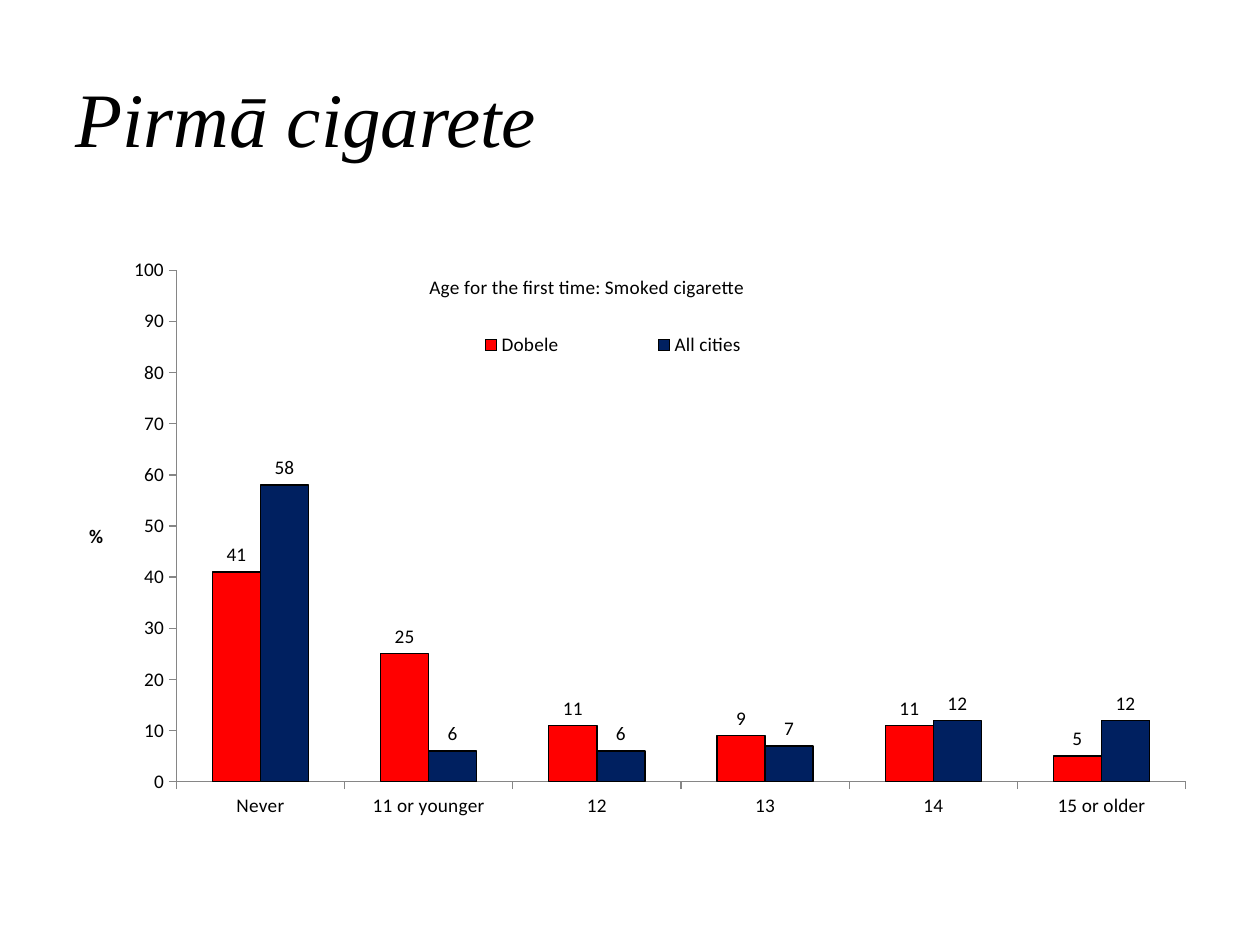
from dataclasses import dataclass

from lxml import etree
from pptx import Presentation
from pptx.chart.data import CategoryChartData
from pptx.dml.color import RGBColor
from pptx.enum.chart import (XL_CHART_TYPE, XL_LABEL_POSITION,
                             XL_LEGEND_POSITION, XL_TICK_MARK)
from pptx.enum.text import MSO_ANCHOR, PP_ALIGN
from pptx.oxml.ns import qn
from pptx.util import Inches, Pt

COLUMNS = XL_CHART_TYPE.COLUMN_CLUSTERED
OUTSIDE_END = XL_LABEL_POSITION.OUTSIDE_END
LEGEND_RIGHT = XL_LEGEND_POSITION.RIGHT
TICK_OUT, TICK_NONE = XL_TICK_MARK.OUTSIDE, XL_TICK_MARK.NONE
MIDDLE, LEFT = MSO_ANCHOR.MIDDLE, PP_ALIGN.LEFT


@dataclass(frozen=True)
class Theme:
    black: RGBColor = RGBColor(0, 0, 0)
    axis: RGBColor = RGBColor(0x86, 0x86, 0x86)
    dobele: RGBColor = RGBColor(0xFF, 0, 0)
    all_cities: RGBColor = RGBColor(0, 0x20, 0x60)
    heading_font: str = "Times New Roman"
    chart_font: str = "Calibri"
    heading_size: int = Pt(44)
    chart_size: int = Pt(11)
    thin: int = Pt(0.75)


THEME = Theme()
AGES = ["Never", "11 or younger", "12", "13", "14", "15 or older"]
SERIES = [
    ("Dobele", [41, 25, 11, 9, 11, 5], THEME.dobele),
    ("All cities", [58, 6, 6, 7, 12, 12], THEME.all_cities),
]


def set_font(font, **values):
    color = values.pop("color", THEME.black)
    for name, value in values.items():
        setattr(font, name, value)
    font.color.rgb = color


def set_line(line, color):
    line.color.rgb = color
    line.width = THEME.thin


def place(element, **fractions):
    """Give a chart part a manual layout in fractions of the chart."""
    old = element.find(qn("c:layout"))
    if old is not None:
        element.remove(old)
    layout = etree.Element(qn("c:layout"))
    manual = etree.SubElement(layout, qn("c:manualLayout"))
    settings = {"xMode": "edge", "yMode": "edge", **fractions}
    if element.tag == qn("c:plotArea"):
        settings = {"layoutTarget": "inner", **settings}
    for name, value in settings.items():
        etree.SubElement(manual, qn(f"c:{name}")).set("val", str(value))
    overlay = element.find(qn("c:overlay"))
    if overlay is None:
        element.insert(0, layout)
    else:
        overlay.addprevious(layout)


def add_heading(page, text):
    box = page.shapes.add_textbox(Inches(0.5), Inches(0.3), Inches(9), Inches(1.25))
    frame = box.text_frame
    frame.word_wrap = True
    frame.vertical_anchor = MIDDLE
    para = frame.paragraphs[0]
    para.alignment = LEFT
    span = para.add_run()
    span.text = text
    set_font(span.font, name=THEME.heading_font, size=THEME.heading_size, italic=True)


def add_chart_text(title, text, bold, x, y):
    frame = title.text_frame
    frame.text = text
    set_font(frame.paragraphs[0].runs[0].font, name=THEME.chart_font,
             size=THEME.chart_size, bold=bold)
    body = next(title._element.iter(qn("a:bodyPr")))
    body.set("rot", "0")
    body.set("vert", "horz")
    place(title._element, x=x, y=y)


def format_axes(chart):
    for axis in (chart.category_axis, chart.value_axis):
        axis.has_major_gridlines = False
        axis.major_tick_mark = TICK_OUT
        axis.minor_tick_mark = TICK_NONE
        set_line(axis.format.line, THEME.axis)
    scale = chart.value_axis
    scale.minimum_scale, scale.maximum_scale, scale.major_unit = 0, 100, 10
    scale.tick_labels.number_format = "0"
    scale.tick_labels.number_format_is_linked = False
    add_chart_text(scale.axis_title, "%", True, 0.02, 0.48)


def format_columns(plot):
    plot.gap_width, plot.overlap = 150, 0
    plot.vary_by_categories = False
    for series, (_, _, color) in zip(plot.series, SERIES):
        series.format.fill.solid()
        series.format.fill.fore_color.rgb = color
        set_line(series.format.line, THEME.black)
        labels = series.data_labels
        for name, value in {"show_value": True, "position": OUTSIDE_END,
                            "number_format": "#,##0",
                            "number_format_is_linked": False}.items():
            setattr(labels, name, value)


def add_age_chart(page):
    data = CategoryChartData()
    data.categories = AGES
    for name, values, _ in SERIES:
        data.add_series(name, values)
    chart = page.shapes.add_chart(COLUMNS, Inches(0.5), Inches(1.75),
                                  Inches(9), Inches(4.95), data).chart
    set_font(chart.font, name=THEME.chart_font, size=THEME.chart_size)
    format_axes(chart)
    format_columns(chart.plots[0])
    chart.has_title = True
    add_chart_text(chart.chart_title, "Age for the first time: Smoked cigarette",
                   False, 0.32, 0.08)
    chart.has_legend = True
    chart.legend.position = LEGEND_RIGHT
    chart.legend.include_in_layout = False
    place(chart.legend._element, x=0.29, y=0.17, w=0.39, h=0.06)
    plot_area = next(chart.element.iter(qn("c:plotArea")))
    place(plot_area, x=0.1, y=0.08, w=0.89, h=0.82)


def main():
    deck = Presentation()
    deck.slide_width, deck.slide_height = Inches(10), Inches(7.5)
    page = deck.slides.add_slide(deck.slide_layouts[6])
    add_heading(page, "Pirmā cigarete")
    add_age_chart(page)
    deck.save("out.pptx")


if __name__ == "__main__":
    main()
